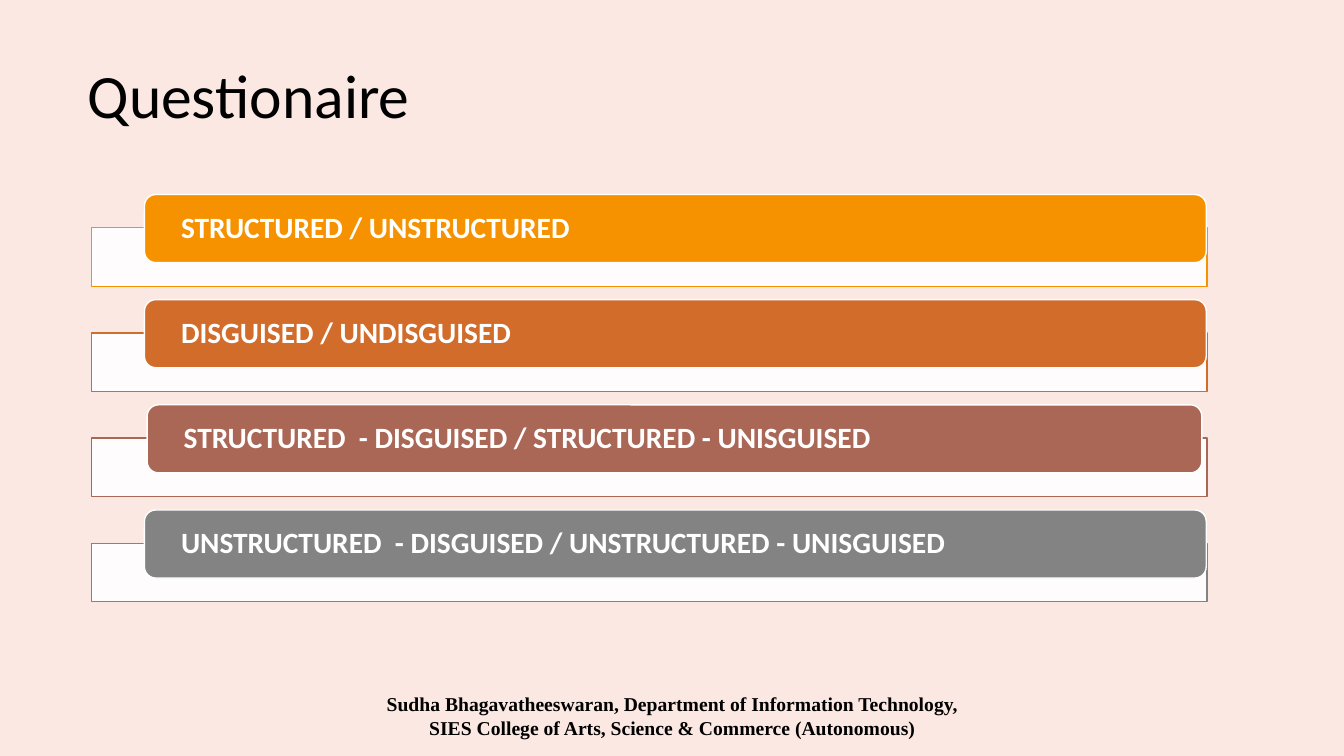
from dataclasses import dataclass

from lxml.etree import SubElement
from pptx import Presentation
from pptx.dml.color import RGBColor
from pptx.enum.shapes import MSO_SHAPE as Shape
from pptx.enum.text import MSO_ANCHOR as Anchor, PP_ALIGN as Align
from pptx.oxml.ns import qn
from pptx.util import Inches, Pt


@dataclass(frozen=True)
class Theme:
    background: str = "FBE8E2"
    ink: str = "000000"
    white: str = "FFFFFF"
    sans: str = "Calibri"
    serif: str = "Times New Roman"
    title_size: int = 44
    bar_size: int = 21
    footer_size: int = 14
    tray_opacity: int = 90


THEME = Theme()
WIDTH, HEIGHT = Inches(13.33), Inches(7.5)

TITLE_BOX = (5.78, 3.33, 86.27, 19.33)
FOOTER_BOX = (26.86, 91.2, 46.36, 6.93)
TRAY_BOX = (6.83, 30.13, 82.97, 7.73)
BAR_TOP, BAR_HEIGHT, ROW_PITCH = 25.73, 9, 13.91
WIDE, NARROW = (10.75, 79), (10.95, 78.47)

ROWS = [
    ("STRUCTURED / UNSTRUCTURED", "F69200", WIDE),
    ("DISGUISED / UNDISGUISED", "D16C2A", WIDE),
    ("STRUCTURED  - DISGUISED / STRUCTURED - UNISGUISED", "AB6756", NARROW),
    ("UNSTRUCTURED  - DISGUISED / UNSTRUCTURED - UNISGUISED", "838383", WIDE),
]


def rgb(code):
    return RGBColor.from_string(code)


def place(left, top, width, height):
    return [int(share * side / 100) for share, side in
            zip((left, top, width, height), (WIDTH, HEIGHT, WIDTH, HEIGHT))]


def write(s, text, font, size, color, bold=False, align=Align.LEFT, spacing=1.0):
    tf = s.text_frame
    tf.word_wrap = True
    tf.vertical_anchor = Anchor.MIDDLE
    tf.text = text
    for p in tf.paragraphs:
        p.alignment = align
        p.line_spacing = spacing
        for r in p.runs:
            r.font.name = font
            r.font.size = Pt(size)
            r.font.bold = bold
            r.font.color.rgb = rgb(color)
    return tf


def add_text(slide, box, text, *style, **options):
    write(slide.shapes.add_textbox(*place(*box)), text, *style, **options)


def add_block(slide, kind, box, fill, line):
    s = slide.shapes.add_shape(kind, *place(*box))
    s.shadow.inherit = False
    s.fill.solid()
    s.fill.fore_color.rgb = rgb(fill)
    s.line.color.rgb = rgb(line)
    s.line.width = Pt(1)
    return s


def add_tray(slide, offset, color):
    left, top, width, height = TRAY_BOX
    s = add_block(slide, Shape.RECTANGLE, (left, top + offset, width, height),
                  THEME.white, color)
    fill_color = s._element.spPr.find(qn("a:solidFill"))[0]
    SubElement(fill_color, qn("a:alpha"), val=str(THEME.tray_opacity * 1000))


def add_bar(slide, offset, text, color, span):
    left, width = span
    s = add_block(slide, Shape.ROUNDED_RECTANGLE,
                  (left, BAR_TOP + offset, width, BAR_HEIGHT), color, THEME.white)
    tf = write(s, text, THEME.sans, THEME.bar_size, THEME.white, bold=True, spacing=0.9)
    tf.margin_left = tf.margin_right = Inches(0.33)
    tf.margin_top = tf.margin_bottom = Inches(0.03)


def main():
    prs = Presentation()
    prs.slide_width, prs.slide_height = WIDTH, HEIGHT
    slide = prs.slides.add_slide(prs.slide_layouts[6])
    slide.background.fill.solid()
    slide.background.fill.fore_color.rgb = rgb(THEME.background)

    add_text(slide, TITLE_BOX, "Questionaire", THEME.sans, THEME.title_size,
             THEME.ink, spacing=0.9)
    for i, (text, color, span) in enumerate(ROWS):
        add_tray(slide, i * ROW_PITCH, color)
        add_bar(slide, i * ROW_PITCH, text, color, span)
    add_text(slide, FOOTER_BOX,
             "Sudha Bhagavatheeswaran, Department of Information Technology,\n"
             "SIES College of Arts, Science & Commerce (Autonomous)",
             THEME.serif, THEME.footer_size, THEME.ink, bold=True, align=Align.CENTER)
    prs.save("out.pptx")


if __name__ == "__main__":
    main()
